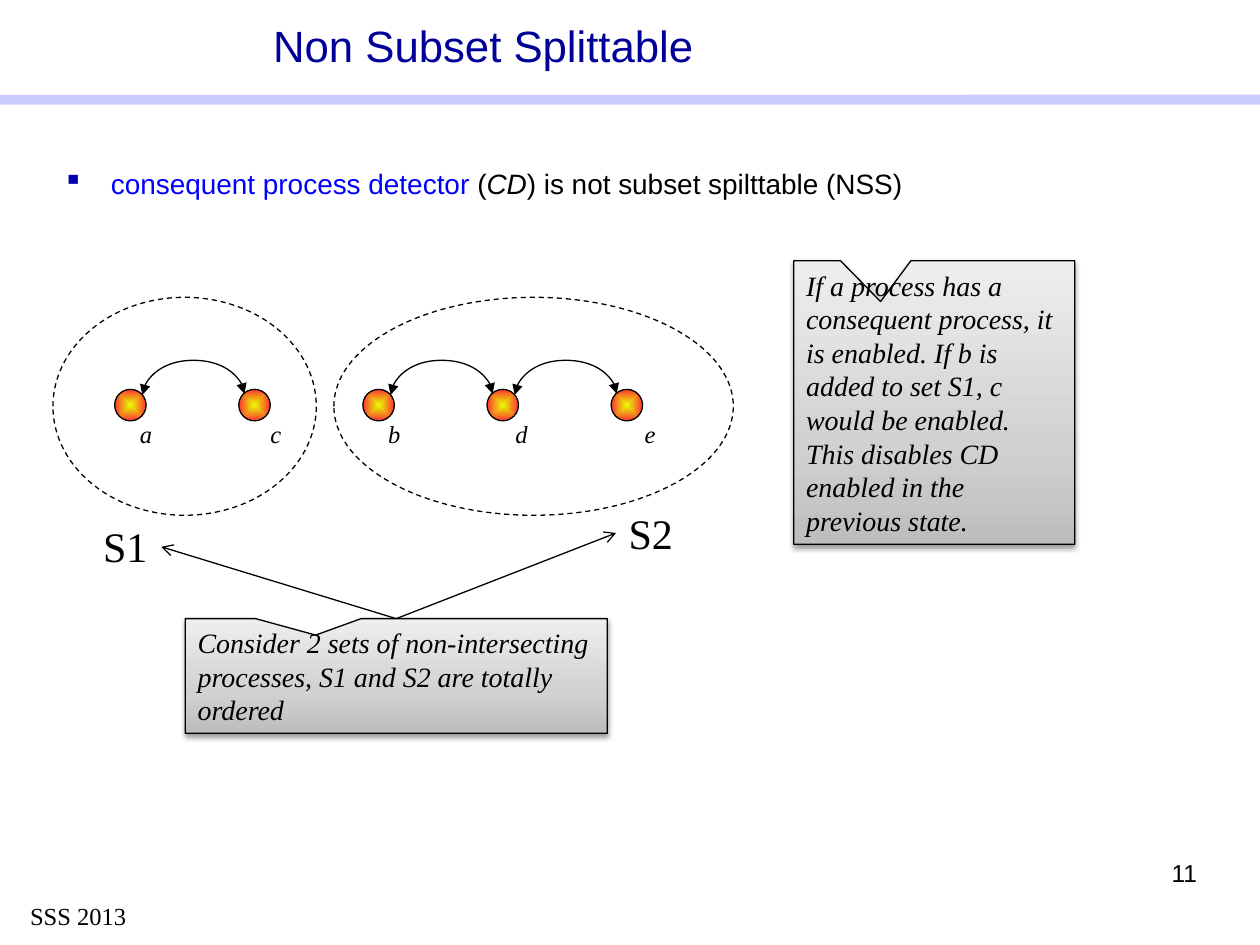
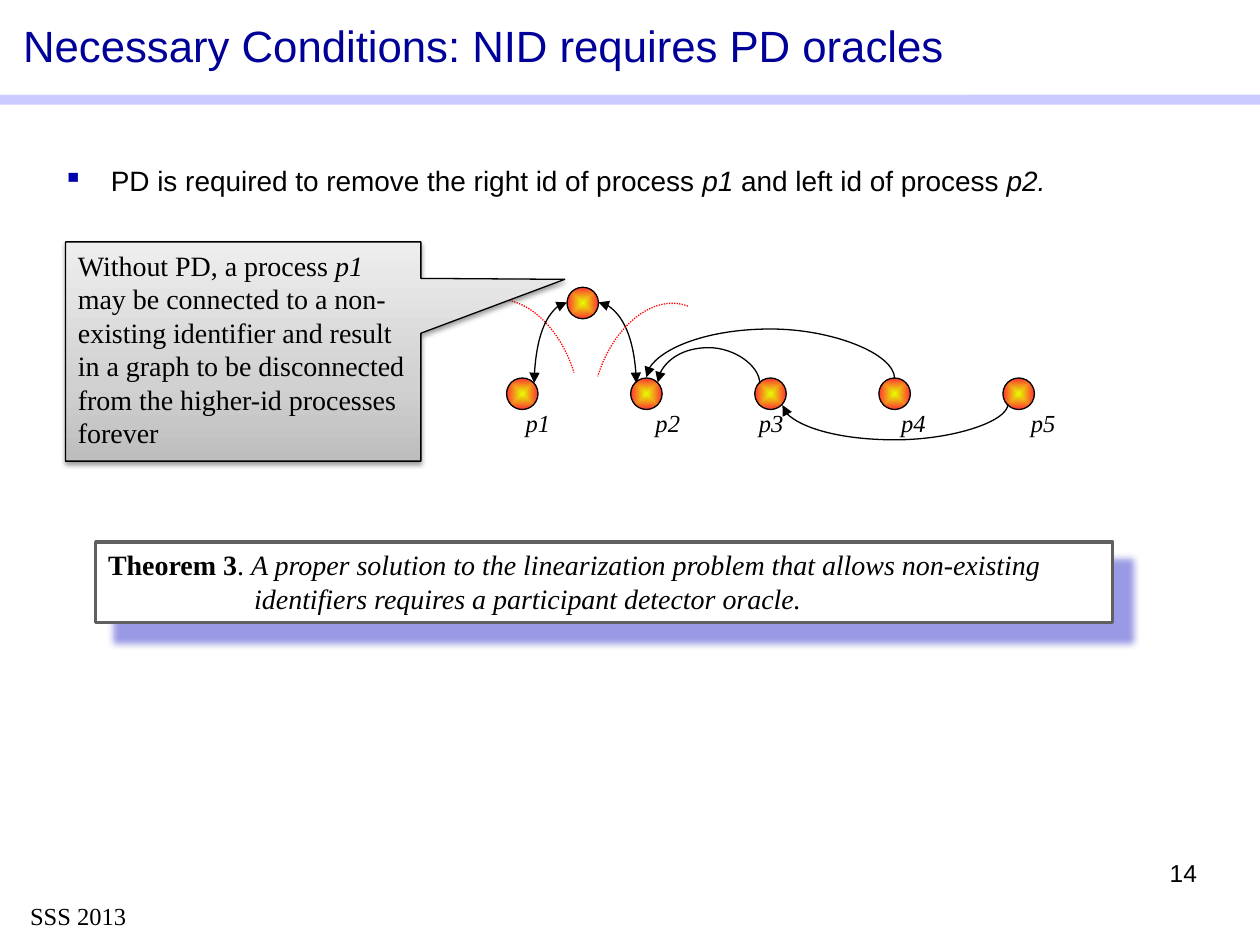
from dataclasses import dataclass

from lxml import etree
from pptx import Presentation
from pptx.dml.color import RGBColor
from pptx.enum.dml import MSO_LINE
from pptx.enum.shapes import MSO_CONNECTOR, MSO_SHAPE
from pptx.enum.text import MSO_ANCHOR, PP_ALIGN
from pptx.oxml import parse_xml
from pptx.oxml.ns import nsdecls, qn
from pptx.util import Inches, Pt

STRAIGHT, CURVE = MSO_CONNECTOR.STRAIGHT, MSO_CONNECTOR.CURVE
RECT, OVAL, ARC = MSO_SHAPE.RECTANGLE, MSO_SHAPE.OVAL, MSO_SHAPE.ARC
CALLOUT = MSO_SHAPE.RECTANGULAR_CALLOUT
TOP, MIDDLE = MSO_ANCHOR.TOP, MSO_ANCHOR.MIDDLE
LEFT, CENTER, RIGHT = PP_ALIGN.LEFT, PP_ALIGN.CENTER, PP_ALIGN.RIGHT
DASH, DOTS = MSO_LINE.DASH, MSO_LINE.ROUND_DOT


@dataclass(frozen=True)
class Theme:
    sans: str = "Arial"
    serif: str = "Times New Roman"
    title_size: int = 25
    set_size: int = 24
    text_size: int = 16
    small_size: int = 14
    thin: float = 0.75
    black: str = "000000"
    white: str = "FFFFFF"
    title: str = "000099"
    band: str = "9999FF"
    bullet: str = "0000AD"
    term: str = "0000FF"
    cut: str = "FF0000"
    theorem_line: str = "606060"
    theorem_shadow: str = "0000BF"
    node: tuple = ((0, "E6FF00"), (100, "FF3333"))
    callout: tuple = ((0, "BDBDBD"), (35, "D1D1D1"), (100, "EEEEEE"))


THEME = Theme()
NODE_SIZE, NODE_PITCH = 0.25, 0.985
CENTRE_SHADING = ('<a:path path="shape"><a:fillToRect l="50000" t="50000" '
                  'r="50000" b="50000"/></a:path>')
UPWARD_SHADING = '<a:lin ang="16200000" scaled="0"/>'


def rgb(value):
    return RGBColor.from_string(value)


def add_shape(slide, kind, left, top, width, height, fill=None, line=None, weight=THEME.thin):
    shape = slide.shapes.add_shape(kind, Inches(left), Inches(top), Inches(width), Inches(height))
    shape.shadow.inherit = False
    if fill:
        shape.fill.solid()
        shape.fill.fore_color.rgb = rgb(fill)
    else:
        shape.fill.background()
    if line:
        shape.line.color.rgb = rgb(line)
        shape.line.width = Pt(weight)
    else:
        shape.line.fill.background()
    return shape


def shade(shape, stops, direction):
    marks = "".join(f'<a:gs pos="{pos * 1000}"><a:srgbClr val="{color}"/></a:gs>'
                    for pos, color in stops)
    gradient = parse_xml(f'<a:gradFill {nsdecls("a")} rotWithShape="1">'
                         f'<a:gsLst>{marks}</a:gsLst>{direction}</a:gradFill>')
    properties = shape._element.spPr
    properties.replace(properties.find(qn("a:noFill")), gradient)


def cast_shadow(shape, color, alpha, blur, distance, angle):
    shape._element.spPr.find(qn("a:effectLst")).append(parse_xml(
        f'<a:outerShdw {nsdecls("a")} blurRad="{Pt(blur)}" dist="{Pt(distance)}" '
        f'dir="{angle * 60000}" algn="tl" rotWithShape="0"><a:srgbClr val="{color}">'
        f'<a:alpha val="{alpha * 1000}"/></a:srgbClr></a:outerShdw>'))


def add_text_box(slide, left, top, width, height):
    return slide.shapes.add_textbox(Inches(left), Inches(top), Inches(width), Inches(height))


def set_frame(shape, anchor=TOP, wrap=True, insets=None):
    frame = shape.text_frame
    frame.word_wrap = wrap
    frame.vertical_anchor = anchor
    if insets:
        (frame.margin_left, frame.margin_top,
         frame.margin_right, frame.margin_bottom) = map(Inches, insets)
    return frame


def write(paragraph, runs, font, size, color=THEME.black, align=LEFT, italic=None):
    paragraph.alignment = align
    paragraph.font.name = font
    paragraph.font.size = Pt(size)
    paragraph.font.color.rgb = rgb(color)
    paragraph.font.italic = italic
    for words, style in runs:
        run = paragraph.add_run()
        run.text = words
        if style == "italic":
            run.font.italic = True
        elif style == "bold":
            run.font.bold = True
        elif style == "term":
            run.font.color.rgb = rgb(THEME.term)


def add_line(slide, kind, start, end, head=None, tail="triangle"):
    line = slide.shapes.add_connector(kind, *map(Inches, (*start, *end)))
    line.line.color.rgb = rgb(THEME.black)
    line.line.width = Pt(THEME.thin)
    outline = line.line._get_or_add_ln()
    for tag, arrow in (("a:headEnd", head), ("a:tailEnd", tail)):
        if arrow:
            etree.SubElement(outline, qn(tag)).set("type", arrow)
    etree.SubElement(line._element.spPr, qn("a:effectLst"))
    return line


def add_arch(slide, start_x, end_x, y, rise, head=None):
    depth, span = 0.01, abs(end_x - start_x)
    middle = (start_x + end_x) / 2
    arch = add_line(slide, CURVE, (middle - depth / 2, y - span / 2),
                    (middle + depth / 2, y + span / 2), head)
    properties = arch._element.spPr
    frame = properties.find(qn("a:xfrm"))
    frame.set("rot", str((270 if rise > 0 else 90) * 60000))
    if (start_x > end_x) == (rise > 0):
        frame.set("flipV", "1")
    bend = etree.SubElement(properties.find(qn("a:prstGeom")).find(qn("a:avLst")), qn("a:gd"))
    bend.set("name", "adj1")
    bend.set("fmla", f"val {round(abs(rise) / depth * 100000)}")


def add_quarter_curve(slide, start, end):
    curve = add_line(slide, CURVE, start, end, head="triangle")
    curve._element.spPr.find(qn("a:prstGeom")).set("prst", "curvedConnector2")


def add_node(slide, left, top):
    node = add_shape(slide, OVAL, left, top, NODE_SIZE, NODE_SIZE, line=THEME.black)
    shade(node, THEME.node, CENTRE_SHADING)


def node_row(slide, left, top, labels):
    width = 0.4
    for name, centre in labels:
        box = add_text_box(slide, left + centre - width / 2, top + 0.19, width, 0.34)
        write(set_frame(box, wrap=False).paragraphs[0], [(name, None)], THEME.serif,
              THEME.small_size, align=CENTER, italic=True)
    for index in range(len(labels)):
        add_node(slide, left + index * NODE_PITCH, top)


def add_callout(slide, left, top, width, height, tip, runs, anchor=MIDDLE, italic=None):
    callout = add_shape(slide, CALLOUT, left, top, width, height, line=THEME.black)
    callout.adjustments[0], callout.adjustments[1] = tip
    shade(callout, THEME.callout, UPWARD_SHADING)
    cast_shadow(callout, THEME.black, 38, 3.1, 1.6, 90)
    write(set_frame(callout, anchor).paragraphs[0], runs, THEME.serif, THEME.text_size,
          italic=italic)
    return callout


def add_base_slide(deck, title, number):
    slide = deck.slides.add_slide(deck.slide_layouts[6])
    band = add_shape(slide, RECT, 0, 0.75, 10, 0.08, fill=THEME.band)
    tint = next(band._element.spPr.iter(qn("a:srgbClr")))
    etree.SubElement(tint, qn("a:alpha")).set("val", "50000")
    footer = add_text_box(slide, 0.14, 7.1, 0.97, 0.34)
    write(set_frame(footer, wrap=False).paragraphs[0], [("SSS 2013", None)],
          THEME.serif, THEME.small_size)
    heading = add_shape(slide, RECT, 0, 0, 7.67, 0.75, fill=THEME.white)
    line = set_frame(heading, MIDDLE, insets=(0, 0, 0, 0)).paragraphs[0]
    line.line_spacing = 0.98
    write(line, [(title, None)], THEME.sans, THEME.title_size, THEME.title, CENTER)
    page = add_text_box(slide, 7.17, 6.83, 2.33, 0.52)
    line = set_frame(page, insets=(0, 0, 0, 0)).paragraphs[0]
    line.line_spacing = 0.95
    write(line, [(number, None)], THEME.sans, THEME.small_size, align=RIGHT)
    return slide


def add_bullet(slide, left, top, width, height, runs, line_spacing=1.0, space_before=0):
    body = add_text_box(slide, left, top, width, height)
    paragraph = set_frame(body, insets=(0, 0.02, 0, 0)).paragraphs[0]
    paragraph.line_spacing = line_spacing
    paragraph.space_before = Pt(space_before)
    write(paragraph, runs, THEME.sans, THEME.text_size)
    properties = paragraph._p.get_or_add_pPr()
    properties.set("marL", str(Inches(0.38)))
    properties.set("indent", str(-Inches(0.38)))
    marks = (f'<a:buClr {nsdecls("a")}><a:srgbClr val="{THEME.bullet}"/></a:buClr>',
             f'<a:buChar {nsdecls("a")} char="▪"/>')
    for mark in marks:
        properties.find(qn("a:defRPr")).addprevious(parse_xml(mark))


def subsets_diagram(slide, left, top):
    row_left, row_top = left + 0.49, top + 0.73
    node_row(slide, row_left, row_top,
             [("a", 0.25), ("c", 1.28), ("b", 2.22), ("d", 3.23), ("e", 4.25)])
    for first in (0, 2, 3):
        start = row_left + first * NODE_PITCH + 0.22
        add_arch(slide, start, start + 0.81, row_top + 0.04, 0.28, head="triangle")
    for offset, width in ((2.23, 3.17), (0, 2.09)):
        subset = add_shape(slide, OVAL, left + offset, top, width, 1.73, line=THEME.black)
        subset.line.dash_style = DASH
    for name, x, y in (("S1", 0.3, 1.72), ("S2", 4.47, 1.62)):
        box = add_text_box(slide, left + x, top + y, 0.56, 0.5)
        write(set_frame(box, wrap=False).paragraphs[0], [(name, None)],
              THEME.serif, THEME.set_size)
    sets_note = add_callout(
        slide, left + 1.05, top + 2.55, 3.35, 0.91, (-0.191, -0.356),
        [("Consider 2 sets of non-intersecting processes, S1 and S2 are totally ordered", None)],
        italic=True)
    for x, y in ((0.86, 1.98), (4.47, 1.87)):
        pointer = add_line(slide, STRAIGHT, (left + 2.72, top + 2.55), (left + x, top + y),
                           tail="arrow")
        pointer.begin_connect(sets_note, 0)


def add_cut(slide, left, top, rotation, mirrored=False):
    cut = add_shape(slide, ARC, left, top, 1, 1.5, line=THEME.cut)
    cut.adjustments[0], cut.adjustments[1] = 160.733, 215.213
    cut.rotation = rotation
    cut.line.dash_style = DOTS
    if mirrored:
        cut._element.spPr.find(qn("a:xfrm")).set("flipH", "1")


def processes_diagram(slide, left, top):
    row_top = top + 0.72
    node_row(slide, left, row_top,
             [("p1", 0.25), ("p2", 1.28), ("p3", 2.1), ("p4", 3.23), ("p5", 4.26)])
    add_arch(slide, left + 3.98, left + 2.19, row_top + 0.21, -0.29)
    add_arch(slide, left + 3.08, left + 1.11, row_top, 0.4)
    add_arch(slide, left + 2.01, left + 1.2, row_top + 0.04, 0.29)
    add_cut(slide, left - 0.44, top + 0.08, 343.5)
    add_quarter_curve(slide, (left + 0.73, top + 0.12), (left + 1.03, top + 0.76))
    add_node(slide, left + 0.48, top)
    add_quarter_curve(slide, (left + 0.48, top + 0.12), (left + 0.22, top + 0.76))
    add_cut(slide, left + 0.7, top + 0.11, 16.5, mirrored=True)


def theorem_box(slide, left, top, width, height):
    box = add_shape(slide, RECT, left, top, width, height, THEME.white, THEME.theorem_line, 2)
    cast_shadow(box, THEME.theorem_shadow, 40, 4, 15, 45)
    frame = set_frame(box)
    write(frame.paragraphs[0],
          [("Theorem 3", "bold"), (". ", None),
           ("A proper solution to the linearization problem that allows non-existing", "italic")],
          THEME.serif, THEME.text_size)
    ending = frame.add_paragraph()
    write(ending, [("identifiers requires a participant detector oracle.", None)],
          THEME.serif, THEME.text_size, italic=True)
    ending._p.get_or_add_pPr().set("marL", str(Inches(1.16)))


def subset_slide(deck):
    slide = add_base_slide(deck, "Non Subset Splittable", "11")
    add_bullet(slide, 0.5, 1.3, 9, 0.68,
               [("consequent process detector ", "term"), ("(", None), ("CD", "italic"),
                (") is not subset spilttable (NSS)", None)], space_before=6)
    subsets_diagram(slide, 0.42, 2.36)
    add_callout(slide, 6.3, 2.07, 2.23, 2.25, (-0.191, -0.356),
                [("If a process has a consequent process, it is enabled. If b is added to set S1, "
                  "c would be enabled. This disables CD enabled in the previous state.", None)],
                italic=True)


def oracle_slide(deck):
    slide = add_base_slide(deck, "Necessary Conditions: NID requires PD oracles", "14")
    theorem_box(slide, 0.76, 4.3, 8.07, 0.64)
    processes_diagram(slide, 4.02, 2.28)
    add_callout(slide, 0.52, 1.92, 2.82, 1.74, (0.905, -0.329),
                [("Without PD, a process ", None), ("p1 ", "italic"),
                 ("may be connected to a non-existing identifier and result in a graph to be "
                  "disconnected from the higher-id processes forever", None)], anchor=TOP)
    add_bullet(slide, 0.5, 1.3, 9, 0.43,
               [("PD is required to remove the right id of process ", None), ("p1 ", "italic"),
                ("and left id of process", None), (" p2.", "italic")], line_spacing=0.95)


def main():
    deck = Presentation()
    deck.slide_width, deck.slide_height = Inches(10), Inches(7.5)
    subset_slide(deck)
    oracle_slide(deck)
    deck.save("out.pptx")


if __name__ == "__main__":
    main()
